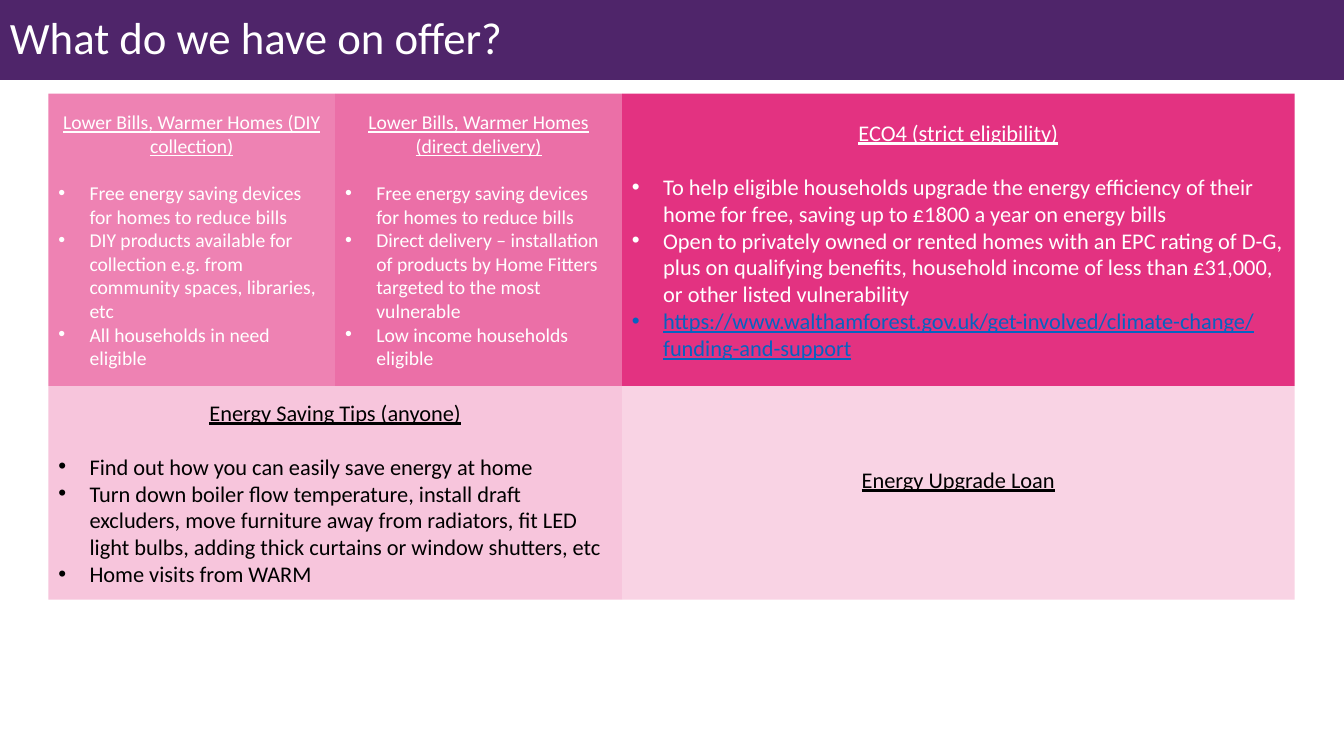
"""Build the slide on energy saving offers."""
from lxml import etree
from pptx import Presentation
from pptx.dml.color import RGBColor
from pptx.enum.shapes import MSO_SHAPE
from pptx.enum.text import MSO_ANCHOR, PP_ALIGN
from pptx.oxml.ns import qn
from pptx.util import Inches, Pt

RECTANGLE = MSO_SHAPE.RECTANGLE
MIDDLE = MSO_ANCHOR.MIDDLE
LEFT, CENTER = PP_ALIGN.LEFT, PP_ALIGN.CENTER
FONT = "Calibri"
WHITE, BLACK, PURPLE, LINK_BLUE = "FFFFFF", "000000", "4F256A", "0563C1"
LINE_HEIGHT = 1.22
INDENT = 0.31
COLUMNS = [0.48, 3.325, 6.17, 12.84]
ROWS = [0.93, 3.83, 5.95]

DEVICES = "Free energy saving devices for homes to reduce bills"
OFFERS = [
    (0, 1, 0, "EE82B3", WHITE, 14, "Lower Bills, Warmer Homes (DIY collection)", [
        DEVICES,
        "DIY products available for collection e.g. from community spaces, libraries, etc",
        "All households in need eligible"]),
    (1, 2, 0, "EB6FA7", WHITE, 14, "Lower Bills, Warmer Homes (direct delivery)", [
        DEVICES,
        "Direct delivery – installation of products by Home Fitters "
        "targeted to the most vulnerable",
        "Low income households eligible"]),
    (2, 3, 0, "E33281", WHITE, 16, "ECO4 (strict eligibility)", [
        "To help eligible households upgrade the energy efficiency of their home for free, "
        "saving up to £1800 a year on energy bills",
        "Open to privately owned or rented homes with an EPC rating of D-G, plus on qualifying "
        "benefits, household income of less than £31,000, or other listed vulnerability",
        "https://www.walthamforest.gov.uk/get-involved/climate-change/funding-and-support"]),
    (0, 2, 1, "F7C5DC", BLACK, 16, "Energy Saving Tips (anyone)", [
        "Find out how you can easily save energy at home",
        "Turn down boiler flow temperature, install draft excluders, move furniture away from "
        "radiators, fit LED light bulbs, adding thick curtains or window shutters, etc",
        "Home visits from WARM"]),
    (2, 3, 1, "F9D3E4", BLACK, 16, "Energy Upgrade Loan", []),
]


def color(value):
    """Turn a hex string into a colour."""
    return RGBColor.from_string(value)


def add_box(page, left, top, width, height, fill):
    """Add a plain filled rectangle with middle-anchored text."""
    box = page.shapes.add_shape(
        RECTANGLE, Inches(left), Inches(top), Inches(width), Inches(height))
    box.shadow.inherit = False
    box.fill.solid()
    box.fill.fore_color.rgb = color(fill)
    box.line.fill.background()
    box.text_frame.word_wrap = True
    box.text_frame.vertical_anchor = MIDDLE
    return box


def style_text(para, size, ink, align=LEFT, underline=False):
    """Align a paragraph and format its runs."""
    para.alignment = align
    for span in para.runs:
        span.font.name = FONT
        span.font.size = Pt(size)
        span.font.color.rgb = color(ink)
        span.font.underline = underline


def add_bullet(para):
    """Give a paragraph a round bullet with a hanging indent."""
    properties = para._p.get_or_add_pPr()
    properties.set("marL", str(Inches(INDENT)))
    properties.set("indent", str(-Inches(INDENT)))
    etree.SubElement(properties, qn("a:buFont"), typeface="Arial")
    etree.SubElement(properties, qn("a:buChar"), char="•")


def add_title(page, width, text):
    """Add the title band across the top."""
    band = add_box(page, 0, 0, width, 0.79, PURPLE)
    band.line.color.rgb = color(PURPLE)
    band.line.width = Pt(0.75)
    band.text_frame.text = text
    para = band.text_frame.paragraphs[0]
    para.line_spacing = 0.9
    style_text(para, 32, WHITE)


def add_offer(page, start, end, row, fill, ink, size, heading, points):
    """Add one offer panel with an underlined heading and bullets."""
    box = add_box(page, COLUMNS[start], ROWS[row], COLUMNS[end] - COLUMNS[start],
                  ROWS[row + 1] - ROWS[row], fill)
    frame = box.text_frame
    frame.text = heading
    title = frame.paragraphs[0]
    style_text(title, size, ink, CENTER, True)
    gap = Pt(size * LINE_HEIGHT)
    if points:
        title.space_after = gap
    else:
        frame.margin_bottom = Inches(0.05) + gap
    for point in points:
        para = frame.add_paragraph()
        para.text = point
        add_bullet(para)
        is_link = point.startswith("https://")
        style_text(para, size, LINK_BLUE if is_link else ink, underline=is_link)


def main():
    """Build and save the deck."""
    deck = Presentation()
    deck.slide_width, deck.slide_height = Inches(13.33), Inches(7.5)
    page = deck.slides.add_slide(deck.slide_layouts[6])
    add_title(page, 13.33, "What do we have on offer?")
    for offer in OFFERS:
        add_offer(page, *offer)
    deck.save("out.pptx")


if __name__ == "__main__":
    main()
